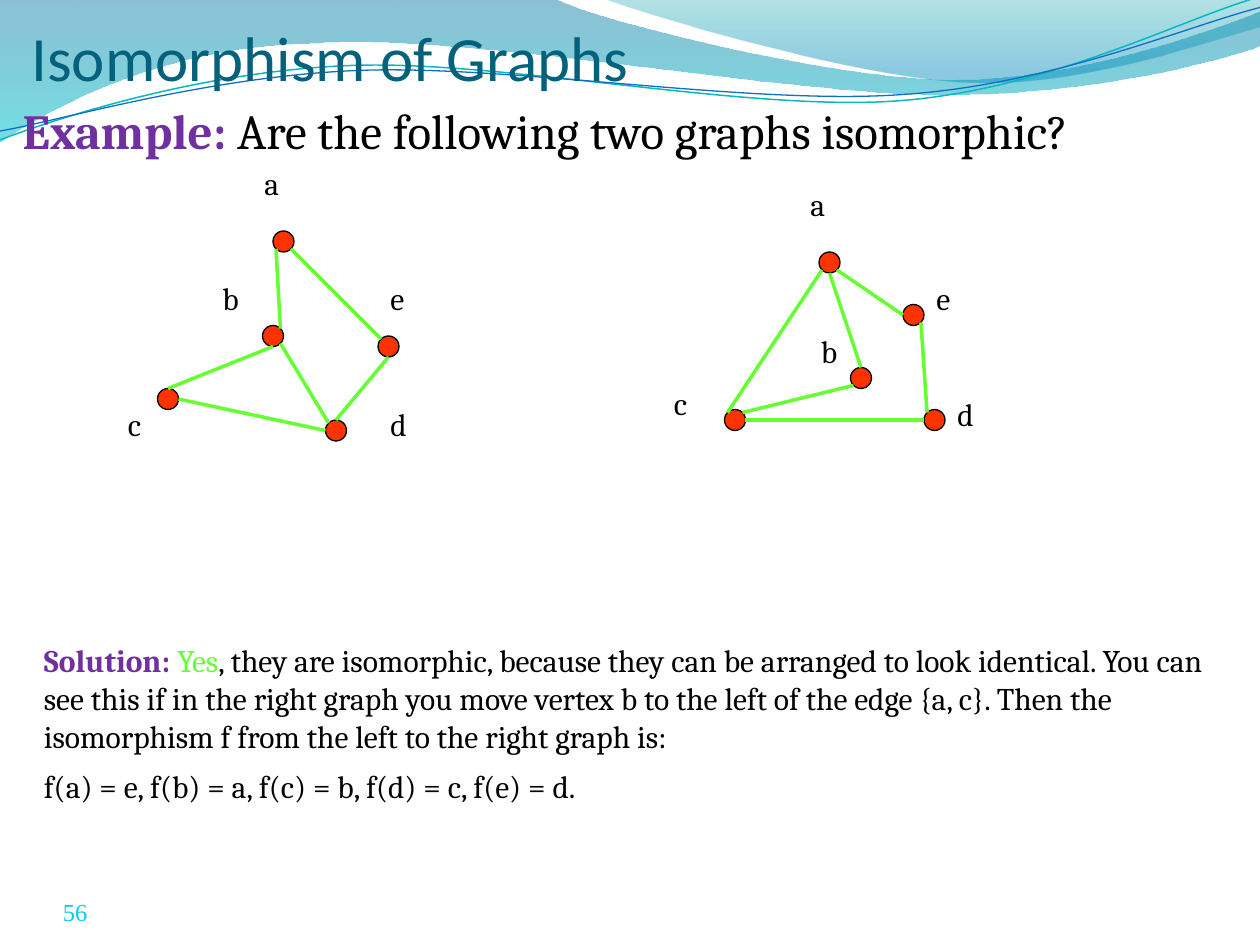
from math import cos, radians, sin
from lxml.etree import SubElement
from pptx import Presentation
from pptx.dml.color import RGBColor
from pptx.enum.shapes import MSO_CONNECTOR, MSO_SHAPE
from pptx.enum.text import MSO_ANCHOR, PP_ALIGN
from pptx.oxml.ns import qn
from pptx.util import Inches, Pt

# Content
TITLE = [("Isomorphism of Graphs", "04617B", False)]
QUESTION = [("Example: ", "7030A0", True),
            ("Are the following two graphs isomorphic?", "000000", False)]
SOLUTION = [
    [("Solution: ", "7030A0", True), ("Yes", "66FF33", False),
     (", they are isomorphic, because they can be arranged to look identical. "
      "You can see this if in the right graph you move vertex b to the left of "
      "the edge {a, c}. Then the isomorphism f from the left to the right graph is:",
      "000000", False)],
    [("f(a) = e, f(b) = a, f(c) = b, f(d) = c, f(e) = d.", "000000", False)],
]
PAGE = [("56", "00CCFF", False)]

# Graphs on a grid of twelfths of an inch: dot centres, label corners, and
# edges as "vertex side vertex side"
GRID = Inches(1) / 12
GRAPHS = [
    {"dots": {"a": (27, 23), "b": (26, 32), "c": (16, 38), "d": (32, 41), "e": (37, 33)},
     "labels": {"a": (24, 15), "b": (20, 26), "c": (11, 38), "d": (36, 38), "e": (36, 26)},
     "edges": ["d n e s", "d w c e", "c n b s", "b ne a sw", "a se e nw", "b se d nw"]},
    {"dots": {"a": (79, 25), "b": (82, 36), "c": (70, 40), "d": (89, 40), "e": (87, 30)},
     "labels": {"a": (76, 17), "b": (77, 31), "c": (63, 36), "d": (90, 37), "e": (88, 26)},
     "edges": ["c e d w", "c ne b sw", "b n a s", "a se e w", "e se d nw", "a sw c nw"]},
]
LABEL_WIDTHS = {"a": 0.67, "b": 0.33, "c": 0.42, "d": 0.67, "e": 0.67}
SIDES = {"n": (0, -1), "s": (0, 1), "e": (1, 0), "w": (-1, 0),
         "ne": (0.71, -0.71), "nw": (-0.71, -0.71),
         "se": (0.71, 0.71), "sw": (-0.71, 0.71)}

# Header waves: each step is a line end (2 numbers) or a Bézier segment (6 numbers)
BANDS = [
    {"start": (0, 0),
     "steps": [(4.4, -0.01), (4.76, 0.17, 6.64, 0.63, 7.58, 0.63),
               (8.53, 0.63, 9.58, 0.26, 10, 0.09), (10.01, 0.36),
               (9.83, 0.44, 8.7, 0.76, 7.46, 0.75), (6.22, 0.75, 3.82, 0.28, 2.57, 0.34),
               (1.29, 0.36, 0.46, 0.83, -0.01, 1.13)],
     "stops": [(0, "0074A1", 45), (1, "00C6CF", 55)]},
    {"start": (4.79, -0.01),
     "steps": [(5.09, 0.11, 6.82, 0.62, 7.69, 0.65), (8.56, 0.69, 9.61, 0.32, 10, 0.21),
               (10, 0)],
     "stops": [(0, "00A1A9", 30), (0.8, "008BBF", 45)]},
]
STRANDS = [
    {"start": (0, 1.11), "center": (4.99, 0.575), "color": "0AB8BF", "width": 0.85,
     "steps": [(0.48, 0.93, 1.58, 0.57, 2.77, 0.52), (3.95, 0.47, 5.93, 0.89, 7.13, 0.8),
               (8.33, 0.71, 9.38, 0.15, 9.98, -0.02)]},
    {"start": (0, 1.04), "center": (5, 0.59), "color": "0F6FC6", "width": 0.75,
     "steps": [(0.47, 0.96, 1.64, 0.61, 2.83, 0.56), (4.03, 0.51, 5.97, 0.84, 7.17, 0.75),
               (8.36, 0.67, 9.41, 0.21, 10, 0.06)]},
]
TILT = 2.7


def rgb(color):
    return RGBColor.from_string(color)


def turn(points, center, degrees):
    """Turn points clockwise about a center."""
    cosine, sine = cos(radians(degrees)), sin(radians(degrees))
    offsets = [(x - center[0], y - center[1]) for x, y in points]
    return [(center[0] + x * cosine - y * sine, center[1] + x * sine + y * cosine)
            for x, y in offsets]


def add_path(shapes, start, steps, close, center=(0, 0), tilt=0):
    points = [start] + [step[i:i + 2] for step in steps for i in range(0, len(step), 2)]
    points = [(Inches(x), Inches(y)) for x, y in turn(points, center, tilt)]
    builder = shapes.build_freeform(*points[0])
    builder.add_line_segments(points[1:], close=close)
    shape = builder.convert_to_shape()
    shape.shadow.inherit = False
    shape.rotation = -tilt
    # Merge the three points of each Bézier segment into one curve
    lines = iter(list(shape._element.iter(qn("a:lnTo"))))
    for step in steps:
        segment = [next(lines) for _ in range(len(step) // 2)]
        if len(segment) == 3:
            segment[0].tag = qn("a:cubicBezTo")
            for line in segment[1:]:
                segment[0].append(line[0])
                line.getparent().remove(line)
    return shape


def add_band(shapes, start, steps, stops):
    shape = add_path(shapes, start, steps, True)
    shape.line.fill.background()
    shape.fill.gradient()
    shape.fill.gradient_angle = 270
    for stop, (position, color, opacity) in zip(shape.fill.gradient_stops, stops):
        stop.position = position
        stop.color.rgb = rgb(color)
        color_element = stop._gs.find(qn("a:srgbClr"))
        SubElement(color_element, qn("a:alpha"), val=str(opacity * 1000))


def add_strand(shapes, start, steps, center, color, width):
    shape = add_path(shapes, start, steps, False, center, TILT)
    shape.fill.background()
    shape.line.color.rgb = rgb(color)
    shape.line.width = Pt(width)


def place(shape, left, top, width, height):
    shape.left, shape.top = Inches(left), Inches(top)
    shape.width, shape.height = Inches(width), Inches(height)


def write(shape, paragraphs, size, font="Cambria", anchor=MSO_ANCHOR.TOP,
          margins=(0.1, 0.05, 0.1, 0.05), gap=0):
    frame = shape.text_frame
    frame.word_wrap = True
    frame.vertical_anchor = anchor
    (frame.margin_left, frame.margin_top,
     frame.margin_right, frame.margin_bottom) = map(Inches, margins)
    for index, runs in enumerate(paragraphs):
        paragraph = frame.add_paragraph() if index else frame.paragraphs[0]
        properties = paragraph._p.get_or_add_pPr()
        properties.set("marL", "0")
        properties.set("indent", "0")
        SubElement(properties, qn("a:buNone"))
        paragraph.alignment = PP_ALIGN.LEFT
        paragraph.space_before = Pt(gap if index else 0)
        paragraph.space_after = Pt(gap)
        for text, color, bold in runs:
            run = paragraph.add_run()
            run.text = text
            run.font.name, run.font.size, run.font.bold = font, Pt(size), bold
            run.font.color.rgb = rgb(color)


def add_text(shapes, box, paragraphs, size, **formatting):
    write(shapes.add_textbox(*map(Inches, box)), paragraphs, size, **formatting)


def add_graph(shapes, dots, labels, edges):
    for x, y in dots.values():
        box = [int(GRID * units) for units in (x - 1, y - 1, 2, 2)]
        dot = shapes.add_shape(MSO_SHAPE.FLOWCHART_CONNECTOR, *box)
        dot.shadow.inherit = False
        dot.fill.solid()
        dot.fill.fore_color.rgb = rgb("FF3300")
        dot.line.color.rgb = rgb("000000")
        dot.line.width = Pt(0.75)
    for name, (left, top) in labels.items():
        box = (left / 12, top / 12, LABEL_WIDTHS[name], 0.57)
        add_text(shapes, box, [[(name, "000000", False)]], 18)
    for edge in edges:
        first, first_side, second, second_side = edge.split()
        ends = [int(GRID * (centre + offset))
                for vertex, side in ((first, first_side), (second, second_side))
                for centre, offset in zip(dots[vertex], SIDES[side])]
        line = shapes.add_connector(MSO_CONNECTOR.STRAIGHT, *ends)
        line.line.color.rgb = rgb("66FF33")
        line.line.width = Pt(2)
        SubElement(line._element.spPr, qn("a:effectLst"))


def main():
    presentation = Presentation()
    presentation.slide_width, presentation.slide_height = Inches(10), Inches(7.5)
    slide = presentation.slides.add_slide(presentation.slide_layouts[1])
    title, body = slide.placeholders

    # Header waves, behind the title and the question
    for band in BANDS:
        add_band(slide.shapes, **band)
    strands = slide.shapes.add_group_shape()
    for strand in STRANDS:
        add_strand(strands.shapes, **strand)

    # Page number, title and question
    add_text(slide.shapes, (0.5, 6.95, 2.33, 0.4), [PAGE], 14, font="Times New Roman",
             anchor=MSO_ANCHOR.BOTTOM, margins=(0, 0, 0, 0))
    for placeholder in (title, body):
        slide.shapes._spTree.append(placeholder._element)
    place(title, 0.25, 0, 9.42, 0.75)
    write(title, [TITLE], 36, font="Calibri", anchor=MSO_ANCHOR.BOTTOM,
          margins=(0, 0.05, 0, 0))
    place(body, 0.08, 0.75, 9.92, 0.58)
    write(body, [QUESTION], 28)

    # Graphs and solution
    for graph in GRAPHS:
        add_graph(slide.shapes.add_group_shape().shapes, **graph)
    add_text(slide.shapes, (0.25, 5.04, 9.58, 2), SOLUTION, 18, gap=3.6)
    presentation.save("out.pptx")


if __name__ == "__main__":
    main()
